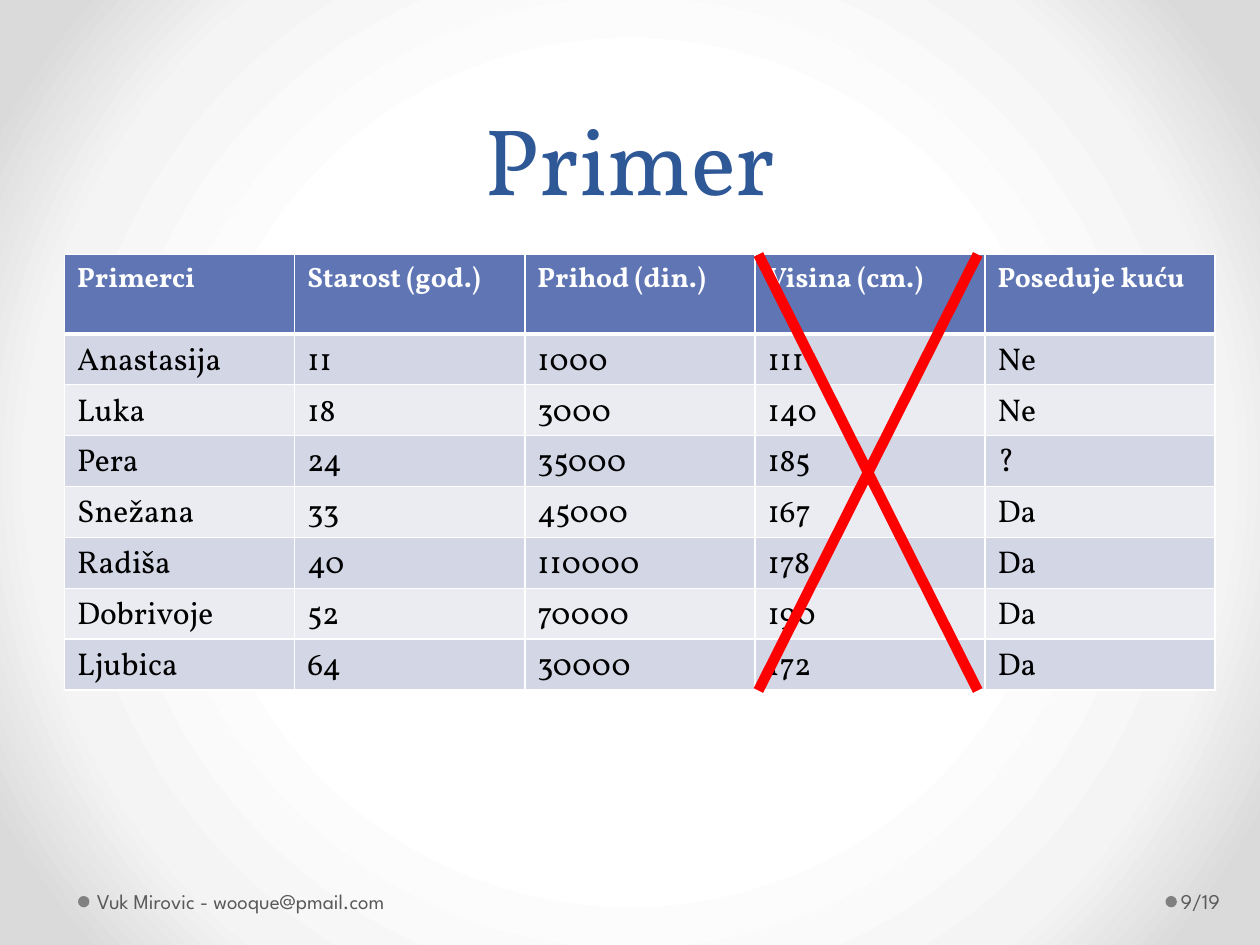
from pptx import Presentation
from pptx.dml.color import RGBColor
from pptx.enum.shapes import MSO_CONNECTOR, MSO_SHAPE
from pptx.enum.text import MSO_ANCHOR, PP_ALIGN
from pptx.oxml import parse_xml
from pptx.oxml.ns import nsdecls, qn
from pptx.util import Pt

LINE = MSO_CONNECTOR.STRAIGHT
DOT = MSO_SHAPE.OVAL
BOTTOM, MIDDLE = MSO_ANCHOR.BOTTOM, MSO_ANCHOR.MIDDLE
CENTER = PP_ALIGN.CENTER

HEX = {
    "title": "2F5897", "foot": "595959", "dot": "808080", "head": "6076B4",
    "odd": "D2D6E5", "even": "EAECF2", "white": "FFFFFF", "black": "000000",
    "cross": "FF0000", "pale": "F4F4F4", "edge": "DADADA",
}
SERIF, SANS = "Vollkorn", "League Spartan"
ROWS = [
    ["Primerci", "Starost (god.)", "Prihod (din.)", "Visina (cm.)", "Poseduje kuću"],
    ["Anastasija", "11", "1000", "111", "Ne"],
    ["Luka", "18", "3000", "140", "Ne"],
    ["Pera", "24", "35000", "185", "?"],
    ["Snežana", "33", "45000", "167", "Da"],
    ["Radiša", "40", "110000", "178", "Da"],
    ["Dobrivoje", "52", "70000", "190", "Da"],
    ["Ljubica", "64", "30000", "172", "Da"],
]


def color(name):
    return RGBColor.from_string(HEX[name])


class Deck:
    def __init__(self):
        self.prs = Presentation()
        self.prs.slide_width, self.prs.slide_height = Pt(720), Pt(540)
        self.slide = self.prs.slides.add_slide(self.prs.slide_layouts[5])
        self.shapes = self.slide.shapes

    def glow(self, stops):
        self.slide.background.fill.gradient()
        old = self.slide.element.find(".//" + qn("a:gradFill"))
        marks = "".join(
            f'<a:gs pos="{pos * 1000}"><a:srgbClr val="{HEX[name]}"/></a:gs>'
            for pos, name in stops)
        new = parse_xml(
            f'<a:gradFill {nsdecls("a")} rotWithShape="1"><a:gsLst>{marks}</a:gsLst>'
            '<a:path path="circle"><a:fillToRect l="50000" t="50000" r="50000" b="50000"/>'
            '</a:path></a:gradFill>')
        old.getparent().replace(old, new)

    def style(self, part, face, size, tint, bold=False):
        for run in part.runs:
            font = run.font
            font.name, font.size, font.bold = face, Pt(size), bold
            font.color.rgb = color(tint)

    def title(self, text):
        shape = self.shapes.title
        shape.left, shape.top, shape.width, shape.height = Pt(36), Pt(0), Pt(648), Pt(126)
        frame = shape.text_frame
        frame.text = text
        frame.vertical_anchor = BOTTOM
        part = frame.paragraphs[0]
        part.alignment, part.line_spacing = CENTER, Pt(58)
        self.style(part, SERIF, 54, "title")

    def dot(self, left, top, size):
        shape = self.shapes.add_shape(DOT, Pt(left), Pt(top), Pt(size), Pt(size))
        shape.shadow.inherit = False
        shape.fill.solid()
        shape.fill.fore_color.rgb = color("dot")
        shape.line.fill.background()

    def note(self, text, left, width, inset, right):
        box = self.shapes.add_textbox(Pt(left), Pt(500.4), Pt(width), Pt(28.8))
        frame = box.text_frame
        frame.word_wrap = True
        frame.vertical_anchor = MIDDLE
        frame.margin_left, frame.margin_right = Pt(inset), Pt(right)
        frame.text = text
        self.style(frame.paragraphs[0], SANS, 12, "foot")

    def edge(self, cell, head, first):
        props = cell._tc.get_or_add_tcPr()
        for side in "LRTB":
            thick = head and side == "B" or first and side == "T"
            props.append(parse_xml(
                f'<a:ln{side} {nsdecls("a")} w="{Pt(3 if thick else 1)}"><a:solidFill>'
                f'<a:srgbClr val="{HEX["white"]}"/></a:solidFill></a:ln{side}>'))

    def table(self, rows, left, top, width, tall, step):
        count = len(rows[0])
        high = tall + step * (len(rows) - 1)
        grid = self.shapes.add_table(
            len(rows), count, Pt(left), Pt(top), Pt(width), Pt(high)).table
        for col in grid.columns:
            col.width = Pt(width / count)
        for i, row in enumerate(rows):
            head = i == 0
            grid.rows[i].height = Pt(tall if head else step)
            fill = "head" if head else "odd" if i % 2 else "even"
            for j, text in enumerate(row):
                cell = grid.cell(i, j)
                self.edge(cell, head, i == 1)
                cell.fill.solid()
                cell.fill.fore_color.rgb = color(fill)
                cell.text_frame.text = text
                self.style(cell.text_frame.paragraphs[0], SERIF, 16 if head else 18,
                           "white" if head else "black", head)

    def line(self, start, end):
        rule = self.shapes.add_connector(LINE, *map(Pt, start + end))
        rule.line.color.rgb = color("cross")
        rule.line.width = Pt(6)
        rule._element.spPr.append(parse_xml(f'<a:effectLst {nsdecls("a")}/>'))

    def cross(self, left, top, right, base):
        self.line((right, top), (left, base))
        self.line((left, top), (right, base))


def main():
    deck = Deck()
    deck.glow([(50, "white"), (76, "pale"), (92, "edge")])
    for left in (666, 44.6):
        deck.dot(left, 512, 6.5)
    deck.title("Primer")
    deck.note("Vuk Mirovic - wooque@pmail.com", 51.8, 224, 3.6, 7.2)
    deck.note("9/19", 672.5, 44, 2.16, 3.6)
    deck.table(ROWS, 36.9, 145.4, 657.5, 45.4, 29.1)
    deck.cross(433.4, 145.4, 558.7, 394.6)
    deck.prs.save("out.pptx")


if __name__ == "__main__":
    main()
